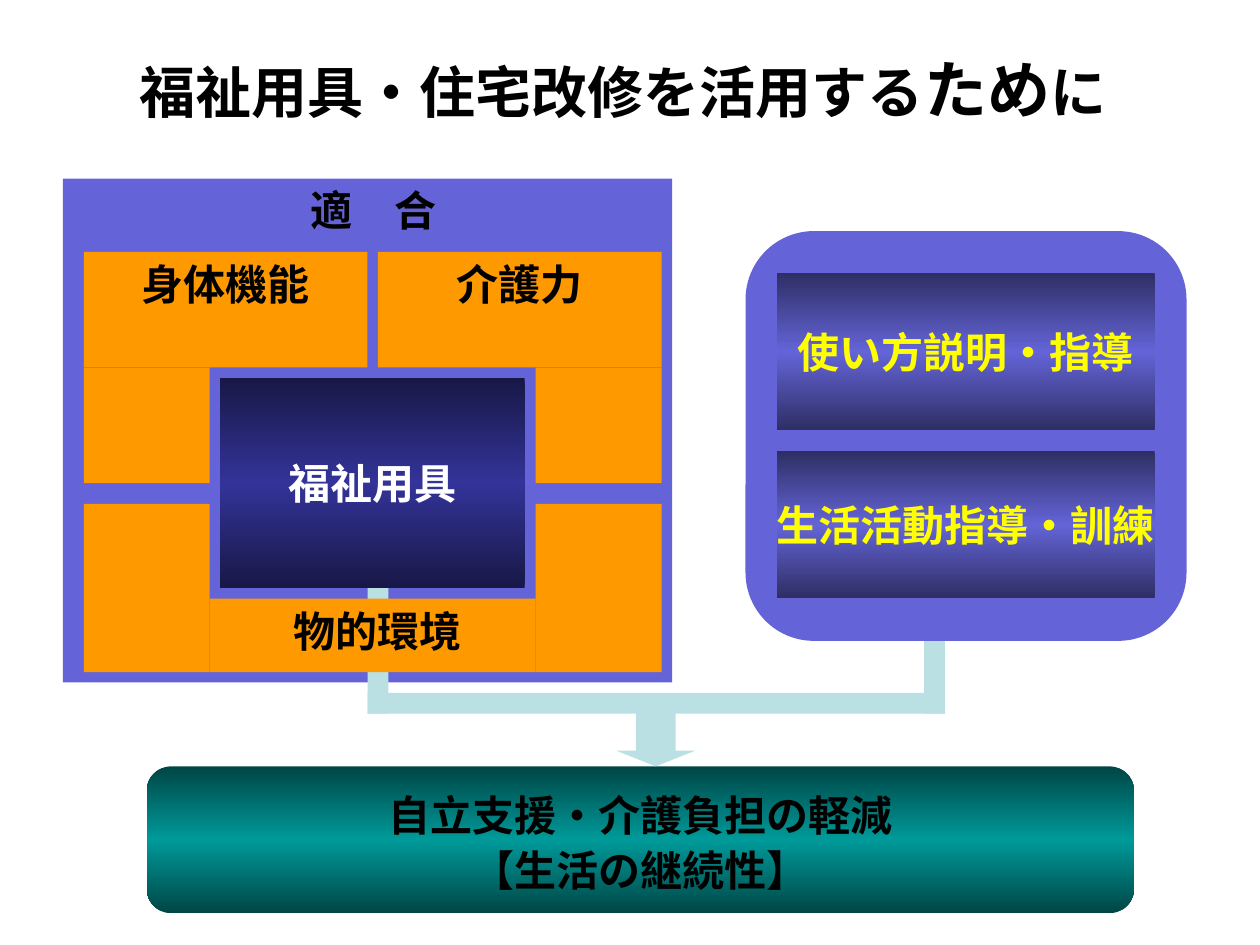
from copy import deepcopy
from dataclasses import dataclass
from typing import NamedTuple

from pptx import Presentation
from pptx import util as u
from pptx.dml.color import RGBColor
from pptx.enum import shapes, text
from pptx.oxml.ns import qn

KIND = shapes.MSO_SHAPE


@dataclass(frozen=True)
class Theme:
    font: str = "Times New Roman"
    body: int = 24
    head: int = 32
    big: int = 36
    black: str = "000000"
    white: str = "FFFFFF"
    yellow: str = "FFFF00"
    frame: str = "6464D8"
    tile: str = "FF9900"
    flow: str = "BBE0E3"
    teal: tuple = ("004646", "009999", "004646")
    navy: tuple = ("181847", "333399", "181847")
    violet: tuple = ("2E2E64", "6464D8", "2E2E64")


class Run(NamedTuple):
    words: str
    size: int


class Box(NamedTuple):
    """Place and size in centimetres."""
    x: float
    y: float
    w: float
    h: float


LOOK = Theme()


def place(shape, box: Box) -> None:
    shape.left, shape.top, shape.width, shape.height = map(u.Cm, box)


def write(shape, lines: list[list[Run]], color: str, space: float = 1.0,
          wrap: bool = False) -> None:
    frame = shape.text_frame
    frame.auto_size = text.MSO_AUTO_SIZE.NONE
    frame.word_wrap = wrap
    frame.vertical_anchor = text.MSO_ANCHOR.MIDDLE
    for i, line in enumerate(lines):
        para = frame.add_paragraph() if i else frame.paragraphs[0]
        para.alignment = text.PP_ALIGN.CENTER
        para.line_spacing = space
        for piece in line:
            run = para.add_run()
            run.text = piece.words
            run.font.name = LOOK.font
            run.font.size = u.Pt(piece.size)
            run.font.bold = True
            run.font.color.rgb = RGBColor.from_string(color)


def shade(shape, tones: tuple) -> None:
    """Fill top to bottom with three evenly spaced tones."""
    shape.fill.gradient()
    stops = shape.element.spPr.find(qn("a:gradFill")).find(qn("a:gsLst"))
    stops.append(deepcopy(stops[-1]))
    for i, (stop, tone) in enumerate(zip(shape.fill.gradient_stops, tones)):
        stop.position = i / 2
        stop.color.rgb = RGBColor.from_string(tone)
    shape.fill.gradient_angle = 90


def draw(slide, box: Box, fill: str | tuple, kind=KIND.RECTANGLE):
    shape = slide.shapes.add_shape(kind, *map(u.Cm, box))
    shape.shadow.inherit = False
    shape.line.fill.background()
    if isinstance(fill, tuple):
        shade(shape, fill)
    else:
        shape.fill.solid()
        shape.fill.fore_color.rgb = RGBColor.from_string(fill)
    return shape


def label(slide, box: Box, words: str) -> None:
    area = slide.shapes.add_textbox(*map(u.Cm, box))
    write(area, [[Run(words, LOOK.body)]], LOOK.black, wrap=True)


def panel(slide, box: Box, fill: tuple, words: list[str], color: str,
          kind=KIND.RECTANGLE, space: float = 1.0) -> None:
    shape = draw(slide, box, fill, kind)
    write(shape, [[Run(line, LOOK.body)] for line in words], color, space)


def draw_flow(slide) -> None:
    """Result panel, with the pipes that join both groups into it."""
    panel(slide, Box(2.96, 15.45, 19.9, 2.96), LOOK.teal,
          ["自立支援・介護負担の軽減", "【生活の継続性】"], LOOK.black,
          KIND.ROUNDED_RECTANGLE, 1.1)
    arrow = draw(slide, Box(12.42, 14.18, 1.6, 1.27), LOOK.flow,
                 KIND.DOWN_ARROW)
    arrow.adjustments[1] = 0.25
    thick, base = 0.42, 14.39
    left, right = 7.41, 19.05
    draw(slide, Box(left, base - thick, right - left, thick), LOOK.flow)
    for x, top in ((left, 10.8), (right - thick, 12.49)):
        draw(slide, Box(x, top, thick, base - top), LOOK.flow)


def draw_guide(slide) -> None:
    draw(slide, Box(15.03, 4.66, 8.89, 8.26), LOOK.frame,
         KIND.ROUNDED_RECTANGLE)
    for y, h, words in ((5.5, 3.18, "使い方説明・指導"),
                        (9.1, 2.96, "生活活動指導・訓練")):
        panel(slide, Box(15.66, y, 7.62, h), LOOK.violet, [words],
              LOOK.yellow)


def draw_tiles(slide) -> None:
    """Two corner pieces above and one U-shaped piece below the core."""
    wide, slim, tall = 5.72, 2.54, 2.33
    left, right = 1.69, 13.34
    for x, side, words in ((left, left, "身体機能"),
                           (right - wide, right - slim, "介護力")):
        draw(slide, Box(x, 5.08, wide, tall), LOOK.tile)
        draw(slide, Box(side, 5.08 + tall, slim, tall), LOOK.tile)
        draw(slide, Box(side, 10.16, slim, 3.39), LOOK.tile)
        label(slide, Box(x, 5.08, wide, 1.27), words)
    inner = left + slim
    draw(slide, Box(inner, 12.07, right - slim - inner, 1.48), LOOK.tile)
    label(slide, Box(5.5, 12.07, 4.23, 1.27), "物的環境")


def main() -> None:
    deck = Presentation()
    deck.slide_width, deck.slide_height = u.Cm(25.4), u.Cm(19.05)
    slide = deck.slides.add_slide(deck.slide_layouts[5])

    title = slide.shapes.title
    place(title, Box(2.49, 0.9, 20.12, 1.78))
    write(title, [[Run("福祉用具・住宅改修を活用する", LOOK.head),
                   Run("ため", LOOK.big), Run("に", LOOK.head)]], LOOK.black)

    draw(slide, Box(1.27, 3.6, 12.28, 10.16), LOOK.frame)
    label(slide, Box(5.29, 3.6, 4.47, 1.27), "適　合")
    draw_flow(slide)
    draw_guide(slide)
    panel(slide, Box(4.44, 7.62, 6.14, 4.23), LOOK.navy, ["福祉用具"],
          LOOK.white)
    draw_tiles(slide)
    deck.save("out.pptx")


if __name__ == "__main__":
    main()
